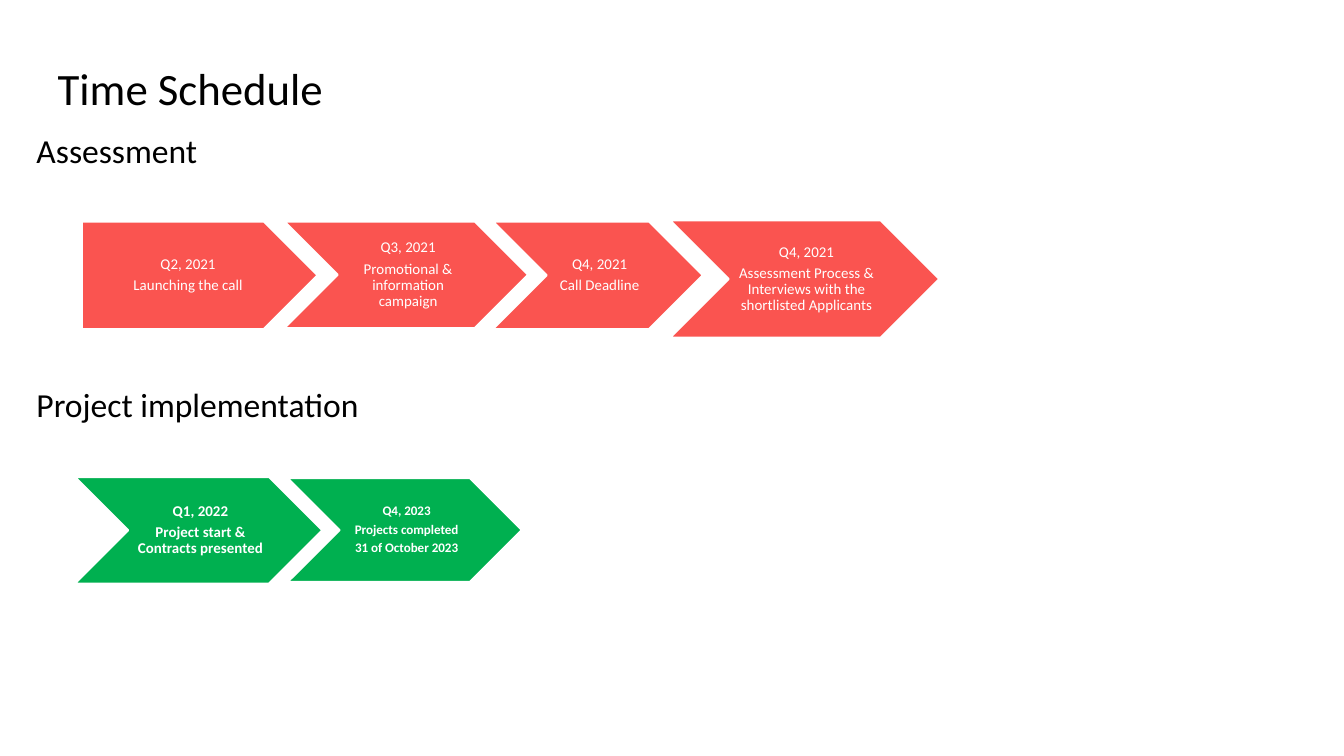
import pptx
import pptx.dml.color
import pptx.enum.shapes
import pptx.enum.text
import pptx.util
from pptx.util import Cm

RGBColor = pptx.dml.color.RGBColor
Shape = pptx.enum.shapes.MSO_SHAPE
Align = pptx.enum.text.PP_ALIGN
Anchor = pptx.enum.text.MSO_ANCHOR
AutoSize = pptx.enum.text.MSO_AUTO_SIZE

CORAL = RGBColor(0xFA, 0x54, 0x50)
GREEN = RGBColor(0x00, 0xB0, 0x50)
WHITE = RGBColor(0xFF, 0xFF, 0xFF)
BLACK = RGBColor(0x00, 0x00, 0x00)

# kind, left, top, width, height (cm), text size, lines
ASSESSMENT_STEPS = [
    (Shape.PENTAGON, 1.55, 4.19, 4.45, 2.03, 8,
     ["Q2, 2021", "Launching the call"]),
    (Shape.CHEVRON, 5.38, 4.19, 4.6, 2.01, 8,
     ["Q3, 2021", "Promotional & information campaign"]),
    (Shape.CHEVRON, 9.32, 4.19, 3.96, 2.03, 8,
     ["Q4, 2021", "Call Deadline"]),
    (Shape.CHEVRON, 12.67, 4.17, 5.08, 2.21, 8,
     ["Q4, 2021",
      "Assessment Process & Interviews with the shortlisted Applicants"]),
]
IMPLEMENTATION_STEPS = [
    (Shape.CHEVRON, 1.42, 9.02, 4.67, 2.01, 8,
     ["Q1, 2022", "Project start & Contracts presented"]),
    (Shape.CHEVRON, 5.44, 9.04, 4.42, 1.96, 7,
     ["Q4, 2023", "Projects completed", "31 of October 2023"]),
]


class SlideBuilder:
    font = "Calibri"
    line_spacing = 0.9
    space_after = 0.35  # share of the text size

    def __init__(self, slide):
        self.slide = slide

    def add_lines(self, frame, lines, size, color, align, bold=False):
        for index, line in enumerate(lines):
            paragraph = frame.add_paragraph() if index else frame.paragraphs[0]
            paragraph.alignment = align
            paragraph.line_spacing = self.line_spacing
            paragraph.space_after = pptx.util.Pt(size * self.space_after)
            run = paragraph.add_run()
            run.text = line
            run.font.name = self.font
            run.font.size = pptx.util.Pt(size)
            run.font.bold = bold
            run.font.color.rgb = color

    def set_margins(self, frame, left, top, right, bottom):
        frame.margin_left, frame.margin_top = Cm(left), Cm(top)
        frame.margin_right, frame.margin_bottom = Cm(right), Cm(bottom)

    def heading(self, text, left, top, height, size):
        box = self.slide.shapes.add_textbox(
            Cm(left), Cm(top), Cm(23.22), Cm(height))
        box.fill.solid()
        box.fill.fore_color.rgb = WHITE
        frame = box.text_frame
        frame.word_wrap = True
        frame.auto_size = AutoSize.SHAPE_TO_FIT_TEXT
        self.set_margins(frame, 0, 0, 0, 0)
        self.add_lines(frame, [text], size, BLACK, Align.LEFT)

    def step(self, kind, left, top, width, height, size, lines, color, bold):
        shape = self.slide.shapes.add_shape(
            kind, Cm(left), Cm(top), Cm(width), Cm(height))
        shape.shadow.inherit = False
        shape.fill.solid()
        shape.fill.fore_color.rgb = color
        shape.line.color.rgb = WHITE
        shape.line.width = pptx.util.Pt(1)
        frame = shape.text_frame
        frame.word_wrap = True
        frame.vertical_anchor = Anchor.MIDDLE
        self.set_margins(frame, 0.1, 0.05, 0.03, 0.05)
        self.add_lines(frame, lines, size, WHITE, Align.CENTER, bold)


def main():
    presentation = pptx.Presentation()
    presentation.slide_width = Cm(25.4)
    presentation.slide_height = Cm(14.29)
    slide = presentation.slides.add_slide(presentation.slide_layouts[6])
    builder = SlideBuilder(slide)

    for step in ASSESSMENT_STEPS:
        builder.step(*step, color=CORAL, bold=False)
    for step in IMPLEMENTATION_STEPS:
        builder.step(*step, color=GREEN, bold=True)

    builder.heading("Time Schedule", 1.09, 1.27, 0.91, 24)
    builder.heading("Assessment", 0.69, 2.54, 0.69, 18)
    builder.heading("Project implementation", 0.69, 7.34, 0.69, 18)

    presentation.save("out.pptx")


if __name__ == "__main__":
    main()
